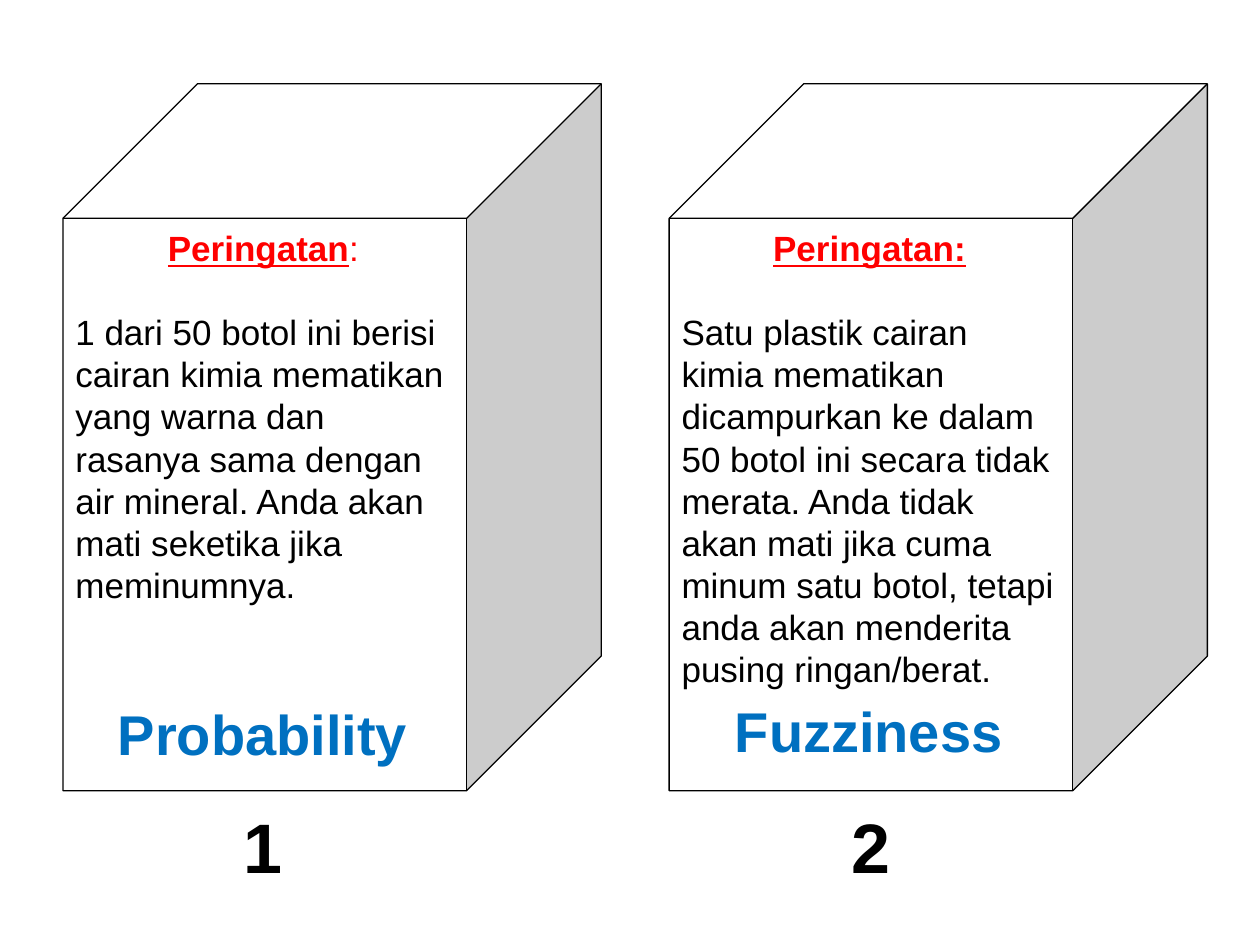
"""Build a slide that contrasts probability and fuzziness on two boxes."""
from pptx import Presentation
from pptx.dml.color import RGBColor
from pptx.enum.shapes import MSO_SHAPE
from pptx.enum.text import PP_ALIGN
from pptx.util import Cm, Pt

BLACK = RGBColor(0x00, 0x00, 0x00)
WHITE = RGBColor(0xFF, 0xFF, 0xFF)
RED = RGBColor(0xFF, 0x00, 0x00)
BLUE = RGBColor(0x00, 0x70, 0xC0)

BOXES = [
    (1.27, 1.27, 13.97, "1", "Probability", [("Peringatan", True), (":", False)],
     "1 dari 50 botol ini berisi cairan kimia mematikan yang warna dan "
     "rasanya sama dengan air mineral. Anda akan mati seketika jika meminumnya."),
    (13.49, 13.54, 13.92, "2", "Fuzziness", [("Peringatan:", True)],
     "Satu plastik cairan kimia mematikan dicampurkan ke dalam 50 botol ini "
     "secara tidak merata. Anda tidak akan mati jika cuma minum satu botol, "
     "tetapi anda akan menderita pusing ringan/berat."),
]


def add_box(left, top, width, height):
    frame = slide.shapes.add_textbox(Cm(left), Cm(top), Cm(width), Cm(height)).text_frame
    frame.word_wrap = True
    return frame


def add_run(para, text, size, color, bold=False, line=False):
    run = para.add_run()
    run.text = text
    font = run.font
    font.name = "Arial"
    font.size = Pt(size)
    font.color.rgb = color
    font.bold = bold
    font.underline = line


deck = Presentation()
deck.slide_width = Cm(25.4)
deck.slide_height = Cm(19.05)
slide = deck.slides.add_slide(deck.slide_layouts[6])

for left, mark, base, number, name, head, body in BOXES:
    cube = slide.shapes.add_shape(MSO_SHAPE.CUBE, Cm(left), Cm(1.69), Cm(10.85), Cm(14.25))
    cube.shadow.inherit = False
    cube.fill.solid()
    cube.fill.fore_color.rgb = WHITE
    cube.line.color.rgb = BLACK
    cube.line.width = Pt(0.75)

    frame = add_box(left, 4.45, 8.08, 11.5)
    title = frame.paragraphs[0]
    title.alignment = PP_ALIGN.CENTER
    title.space_after = Pt(24)
    for text, strong in head:
        add_run(title, text, 20, RED, strong, strong)
    add_run(frame.add_paragraph(), body, 20, BLACK)

    for text, start, top, size, color in [
        (number, mark, 16.08, 40, BLACK),
        (name, left, base, 32, BLUE),
    ]:
        para = add_box(start, top, 8.05, 2.03).paragraphs[0]
        para.alignment = PP_ALIGN.CENTER
        add_run(para, text, size, color, True)

deck.save("out.pptx")
